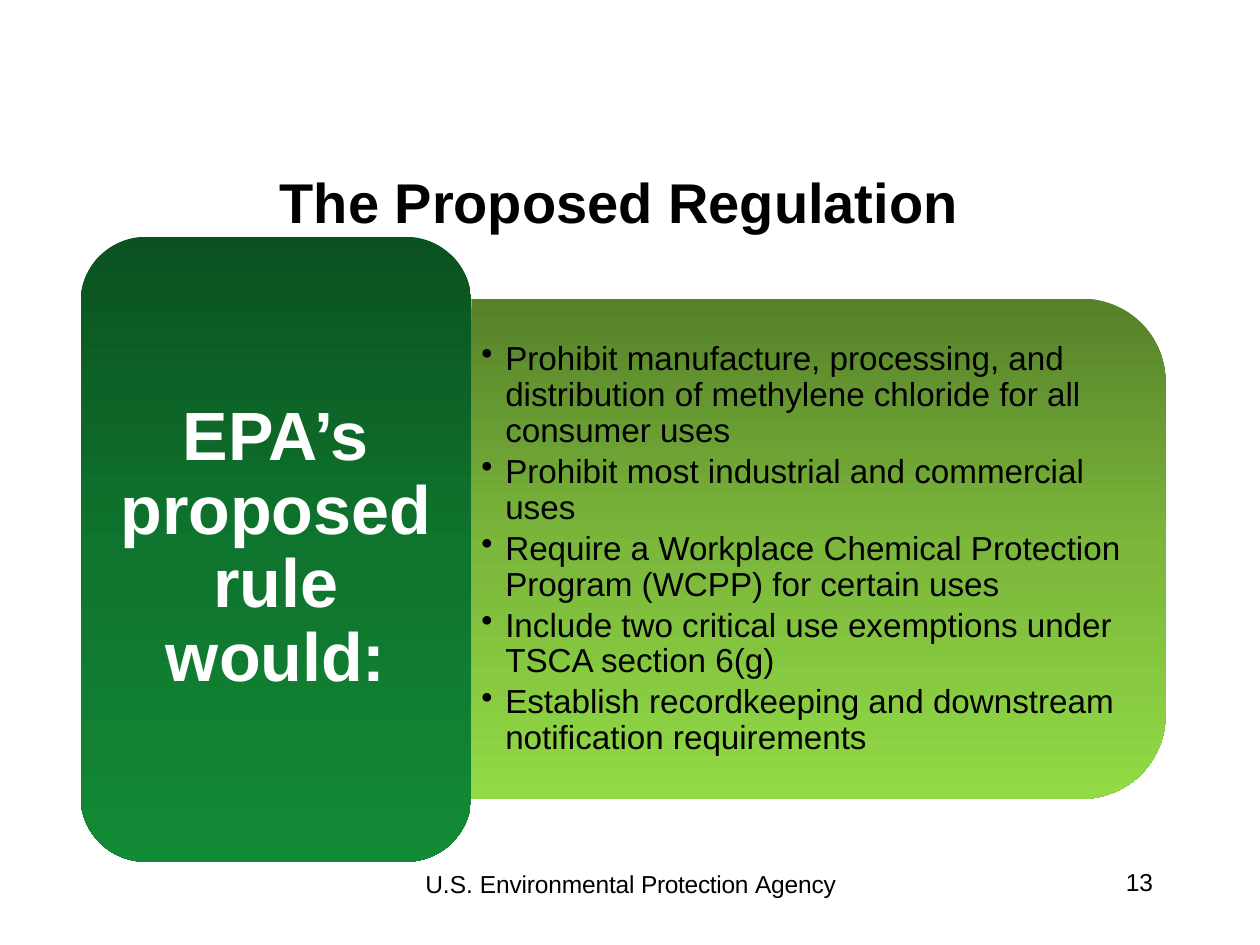
from dataclasses import dataclass

from lxml import etree
from pptx import Presentation
from pptx.dml.color import RGBColor
from pptx.enum.shapes import MSO_SHAPE
from pptx.enum.text import MSO_ANCHOR, PP_ALIGN
from pptx.oxml.ns import qn
from pptx.util import Inches, Pt

LEFT, CENTER, RIGHT = PP_ALIGN.LEFT, PP_ALIGN.CENTER, PP_ALIGN.RIGHT
TOP, MIDDLE = MSO_ANCHOR.TOP, MSO_ANCHOR.MIDDLE
ROUNDED, ROUNDED_TOP = MSO_SHAPE.ROUNDED_RECTANGLE, MSO_SHAPE.ROUND_2_SAME_RECTANGLE


@dataclass(frozen=True)
class Theme:
    font: str = "Arial"
    ink: str = "000000"
    white: str = "FFFFFF"
    lime: tuple = ("57812A", "7BB73B", "92DA46")
    green: tuple = ("0B5220", "0F742D", "128A36")
    title: int = 32
    lead: int = 39
    body: int = 19
    footer: int = 14


theme = Theme()
deck = Presentation()
deck.slide_width, deck.slide_height = Inches(10), Inches(7.5)
page = deck.slides.add_slide(deck.slide_layouts[6])


def add_panel(kind, left, top, width, height, colors, rotation=0):
    """Add a borderless shape shaded evenly from top to bottom."""
    panel = page.shapes.add_shape(kind, Inches(left), Inches(top), Inches(width), Inches(height))
    panel.rotation = rotation
    panel.shadow.inherit = False
    panel.line.fill.background()
    panel.fill.gradient()
    gradient = panel.fill._xPr.find(qn("a:gradFill"))
    gradient.set("rotWithShape", "0")
    gradient.find(qn("a:lin")).set("ang", "5400000")
    stops = gradient.find(qn("a:gsLst"))
    for stop in list(stops):
        stops.remove(stop)
    for index, color in enumerate(colors):
        stop = etree.SubElement(stops, qn("a:gs"), pos=str(index * 50000))
        etree.SubElement(stop, qn("a:srgbClr"), val=color)


def add_text(paragraphs, left, top, width, height, *, size, color=theme.ink, bold=False,
             align=LEFT, anchor=TOP, insets=(0.1, 0.05), line_spacing=None,
             space_after=None, bullet_indent=None):
    """Add a text box; each paragraph is a list of (text, letter spacing) spans."""
    box = page.shapes.add_textbox(Inches(left), Inches(top), Inches(width), Inches(height))
    frame = box.text_frame
    frame.word_wrap = True
    frame.vertical_anchor = anchor
    frame.margin_left = frame.margin_right = Inches(insets[0])
    frame.margin_top = frame.margin_bottom = Inches(insets[1])
    for index, spans in enumerate(paragraphs):
        para = frame.add_paragraph() if index else frame.paragraphs[0]
        para.alignment = align
        para.line_spacing = line_spacing
        para.space_after = space_after
        if bullet_indent:
            properties = para._p.get_or_add_pPr()
            properties.set("marL", str(Inches(bullet_indent)))
            properties.set("indent", str(-Inches(bullet_indent)))
            etree.SubElement(properties, qn("a:buChar"), char="•")
        for text, letter_spacing in spans:
            span = para.add_run()
            span.text = text
            span.font.name = theme.font
            span.font.size = Pt(size)
            span.font.bold = bold
            span.font.color.rgb = RGBColor.from_string(color)
            if letter_spacing:
                span.font._element.set("spc", str(round(letter_spacing * 100)))


# Title
add_text([[("The Proposed Regulation", 0)]], 0.75, 1.06, 8.33, 1.08,
         size=theme.title, bold=True, align=CENTER, anchor=MIDDLE)

# Requirements panel, turned so that its round corners face right
requirements = [
    "Prohibit manufacture, processing, and distribution of methylene chloride for all consumer uses",
    "Prohibit most industrial and commercial uses",
    "Require a Workplace Chemical Protection Program (WCPP) for certain uses",
    "Include two critical use exemptions under TSCA section 6(g)",
    "Establish recordkeeping and downstream notification requirements",
]
add_panel(ROUNDED_TOP, 4.51, 1.6, 3.97, 5.51, theme.lime, rotation=90)
add_text([[(text, 0)] for text in requirements], 3.74, 2.57, 5.32, 3.58,
         size=theme.body, anchor=MIDDLE, insets=(0.08, 0.04),
         line_spacing=0.9, space_after=Pt(2.9), bullet_indent=0.19)

# Lead-in panel
add_panel(ROUNDED, 0.64, 1.88, 3.1, 4.96, theme.green)
add_text([[("EPA’s proposed rule would:", 0)]], 0.79, 2.03, 2.8, 4.65,
         size=theme.lead, color=theme.white, bold=True, align=CENTER, anchor=MIDDLE,
         insets=(0.16, 0.08), line_spacing=0.9)

# Footer and page number
agency = [("U.S. ", 0), ("Environmental", -0.1), (" Protection ", -0.2), ("Agency", -0.1)]
add_text([agency], 1.43, 6.83, 7.15, 0.5,
         size=theme.footer, align=CENTER, line_spacing=Pt(17.9))
add_text([[("13", 0)]], 7.17, 6.83, 2.08, 0.5, size=theme.footer, align=RIGHT)

deck.save("out.pptx")
